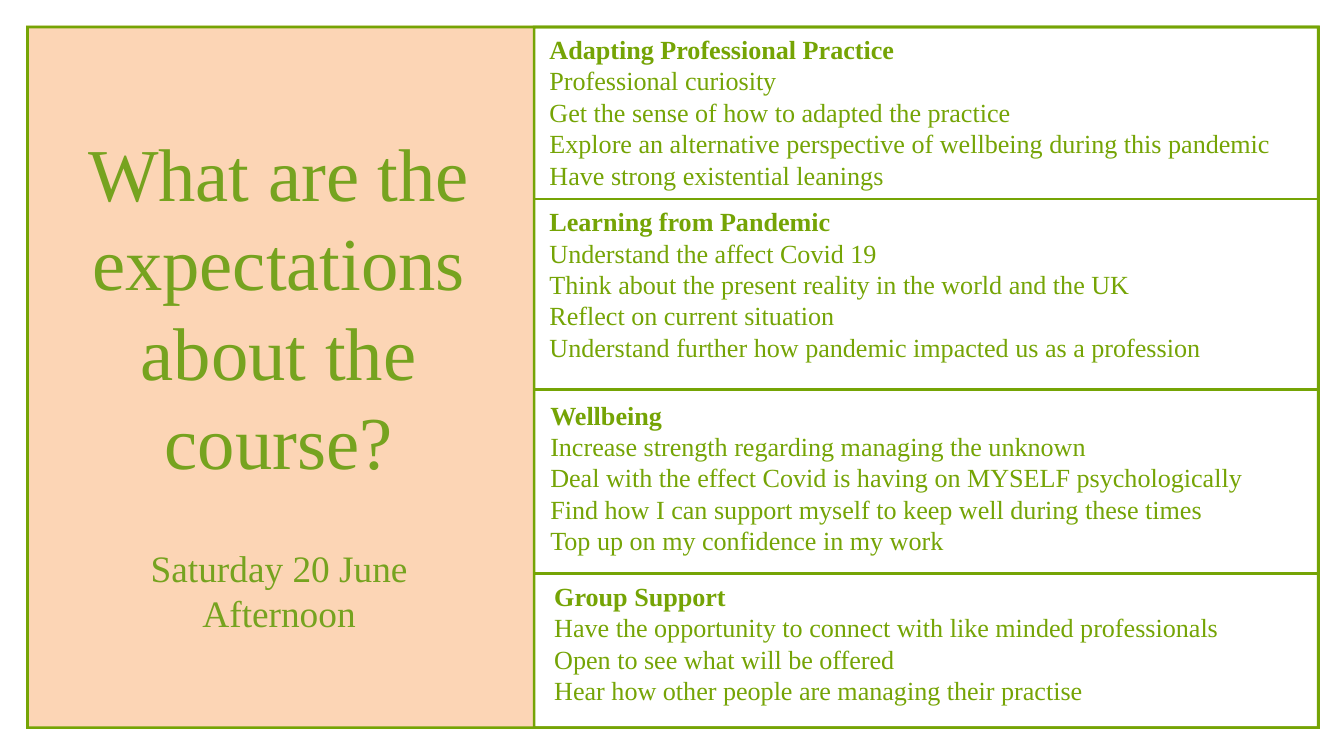
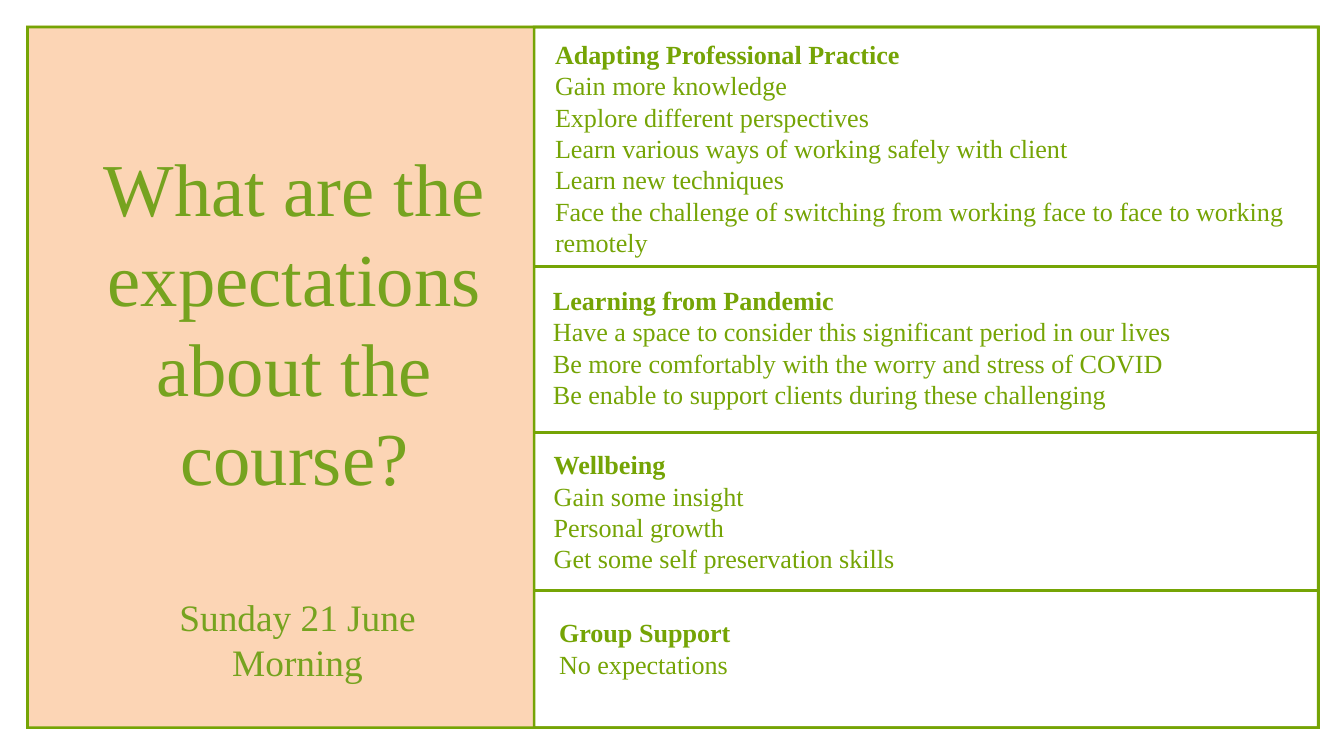
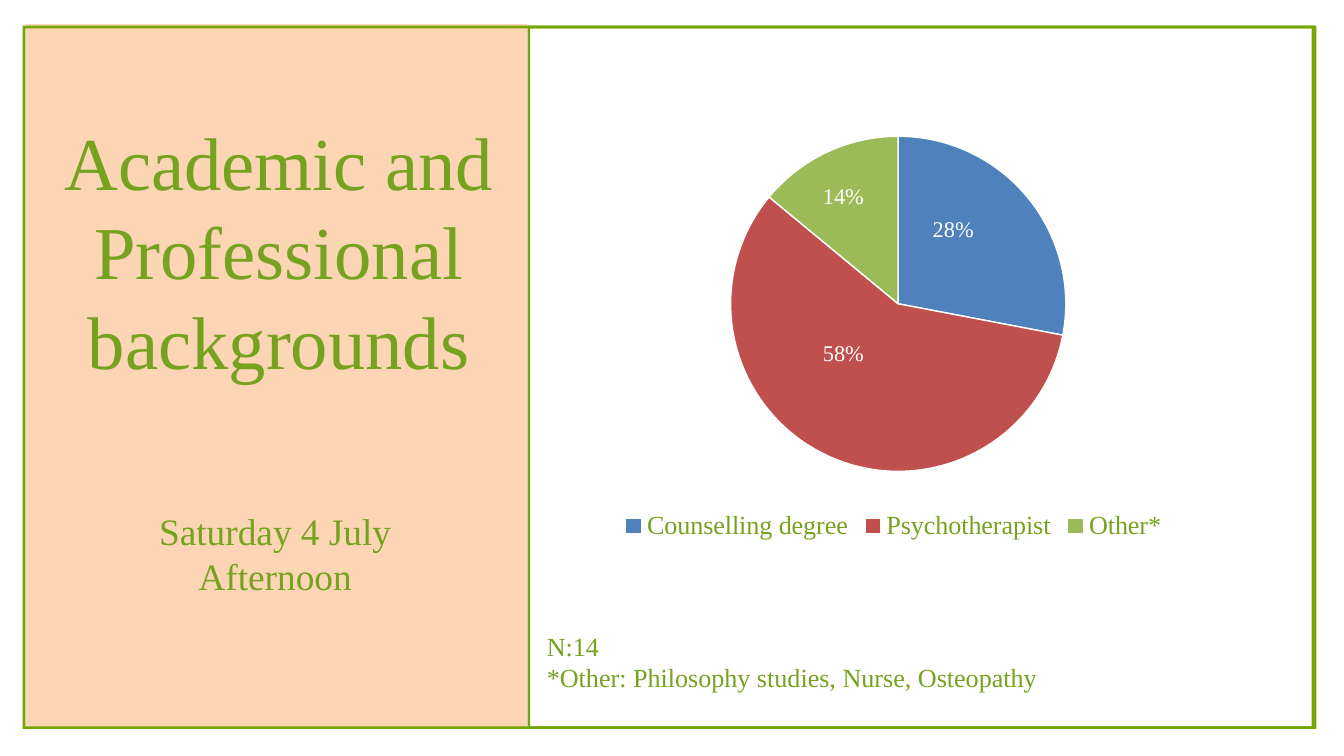
import lxml.etree
import pptx
import pptx.chart.data
import pptx.dml.color
import pptx.enum.chart
import pptx.enum.shapes
import pptx.enum.text
import pptx.oxml
import pptx.oxml.ns
import pptx.util

Cm, Pt = pptx.util.Cm, pptx.util.Pt
qn = pptx.oxml.ns.qn

COLORS = {
    "panel": "FCD5B5",
    "border": "75A405",
    "heading": "76A31F",
    "white": "FFFFFF",
    "blue": "4F81BD",
    "red": "C0504D",
    "green": "9BBB59",
}
FONT = "Times New Roman"
BAND = 0.1
QUESTION = "What are the expectations about the course?"

# Boxes are (left, top, width, height) in centimetres.
PANEL = (0.99, 0.97, 19.15, 26.59)
OUTER = (0.99, 0.97, 48.9, 26.59)
CONTENT = (20.14, 0.97, 29.74, 26.59)


def rgb(name):
    return pptx.dml.color.RGBColor.from_string(COLORS[name])


def style_font(font, size, color, bold=False):
    font.name, font.size, font.bold = FONT, Pt(size), bold
    font.color.rgb = rgb(color)


def add_text(s, box, lines, size=28, color="heading", bold_first=False,
             center=False, spacing=None, inset=True, wrap=True):
    """Add a text box with one paragraph for each line."""
    tf = s.shapes.add_textbox(*map(Cm, box)).text_frame
    tf.word_wrap = wrap
    if not inset:
        tf.margin_left = tf.margin_top = tf.margin_right = tf.margin_bottom = 0
    for i, line in enumerate(lines):
        p = tf.add_paragraph() if i else tf.paragraphs[0]
        if center:
            p.alignment = pptx.enum.text.PP_ALIGN.CENTER
        if spacing:
            p.line_spacing = Pt(spacing)
        r = p.add_run()
        r.text = line
        style_font(r.font, size, color, bold_first and i == 0)


def paint(sp, color):
    sp.fill.solid()
    sp.fill.fore_color.rgb = rgb(color)
    sp.line.fill.background()
    sp.shadow.inherit = False


def add_frame(s, box):
    """Draw a hollow rectangle as an outer and an inner outline."""
    x, y, w, h = box
    right, bottom = x + w, y + h
    outer = [(right, y), (x, y), (x, bottom), (right, bottom)]
    inner = [(right - BAND, bottom - BAND), (x + BAND, bottom - BAND),
             (x + BAND, y + BAND), (right - BAND, y + BAND)]
    outer, inner = ([(Cm(a), Cm(b)) for a, b in pts] for pts in (outer, inner))
    builder = s.shapes.build_freeform(*outer[0])
    builder.add_line_segments(outer[1:], close=True)
    builder.move_to(*inner[0])
    builder.add_line_segments(inner[1:], close=True)
    paint(builder.convert_to_shape(), "border")


def add_divider(s, x, y, width):
    line = s.shapes.add_connector(
        pptx.enum.shapes.MSO_CONNECTOR.STRAIGHT,
        Cm(x), Cm(y), Cm(x + width), Cm(y))
    line.line.color.rgb = rgb("border")
    line.line.width = Pt(3)
    lxml.etree.SubElement(line._element.spPr, qn("a:effectLst"))


def add_base(prs, panel=PANEL, outer=OUTER, content=CONTENT):
    """Add a slide with the coloured panel and both frames."""
    s = prs.slides.add_slide(prs.slide_layouts[6])
    paint(s.shapes.add_shape(pptx.enum.shapes.MSO_SHAPE.RECTANGLE,
                             *map(Cm, panel)), "panel")
    add_frame(s, outer)
    add_frame(s, content)
    return s


def add_panel_text(s, heading, heading_box, date, date_box, wrap_date=True):
    add_text(s, heading_box, [heading], size=80, center=True, spacing=96,
             inset=False)
    add_text(s, date_box, date, size=40, center=True, wrap=wrap_date)


def add_expectations(s, sections, dividers):
    for box, lines in sections:
        add_text(s, box, lines, color="border", bold_first=True)
    for x, y in dividers:
        add_divider(s, x, y, 29.68)


def manual_layout(**values):
    """Make a c:layout element from its settings."""
    layout = pptx.oxml.parse_xml(
        '<c:layout xmlns:c="http://schemas.openxmlformats.org/'
        'drawingml/2006/chart"><c:manualLayout/></c:layout>')
    for key, value in values.items():
        lxml.etree.SubElement(layout[0], qn("c:" + key)).set("val", str(value))
    return layout


def add_backgrounds_pie(s, box):
    data = pptx.chart.data.CategoryChartData()
    data.categories = ["Counselling degree", "Psychotherapist", "Other*"]
    data.add_series("Series 1", (28, 58, 14))
    chart = s.shapes.add_chart(pptx.enum.chart.XL_CHART_TYPE.PIE,
                               *map(Cm, box), data).chart
    chart.has_title = False
    chart.has_legend = True
    chart.legend.position = pptx.enum.chart.XL_LEGEND_POSITION.BOTTOM
    chart.legend.include_in_layout = False
    style_font(chart.legend.font, 28, "heading")
    plot = chart.plots[0]
    plot.vary_by_categories = True

    label_shifts = [(-0.01, -0.04), (-0.02, -0.05), (-0.02, -0.06)]
    for i, color in enumerate(("blue", "red", "green")):
        point = plot.series[0].points[i]
        point.format.fill.solid()
        point.format.fill.fore_color.rgb = rgb(color)
        point.format.line.color.rgb = rgb("white")
        point.format.line.width = Pt(1.5)
        style_font(point.data_label.font, 24, "white")
        point.data_label.position = pptx.enum.chart.XL_LABEL_POSITION.CENTER

    root = chart._chartSpace
    for label, (dx, dy) in zip(root.iter(qn("c:dLbl")), label_shifts):
        label.find(qn("c:showVal")).set("val", "0")
        label.find(qn("c:showPercent")).set("val", "1")
        label.insert(1, manual_layout(x=dx, y=dy))

    area = next(root.iter(qn("c:plotArea")))
    for old in area.findall(qn("c:layout")):
        area.remove(old)
    area.insert(0, manual_layout(layoutTarget="inner", xMode="edge",
                                 yMode="edge", x=0.33, y=0.16, w=0.35, h=0.75))


def saturday_june(prs):
    s = add_base(prs)
    add_panel_text(s, QUESTION, (2.08, 4.78, 16.92, 13.69),
                   ["Saturday 20 June Afternoon"], (4.72, 20.5, 11.66, 3.68))
    add_expectations(s, [
        ((20.52, 1.14, 29.69, 14.1), [
            "Adapting Professional Practice",
            "Professional curiosity",
            "Get the sense of how to adapted the practice",
            "Explore an alternative perspective of wellbeing during this pandemic",
            "Have strong existential leanings"]),
        ((20.52, 7.65, 26.49, 9.4), [
            "Learning from Pandemic",
            "Understand the affect Covid 19",
            "Think about the present reality in the world and the UK",
            "Reflect on current situation",
            "Understand further how pandemic impacted us as a profession"]),
        ((20.55, 14.96, 26.67, 7.77), [
            "Wellbeing",
            "Increase strength regarding managing the unknown",
            "Deal with the effect Covid is having on MYSELF psychologically",
            "Find how I can support myself to keep well during these times",
            "Top up on my confidence in my work"]),
        ((20.7, 21.82, 26.67, 6.83), [
            "Group Support",
            "Have the opportunity to connect with like minded professionals",
            "Open to see what will be offered",
            "Hear how other people are managing their practise"]),
    ], [(20.14, 7.52), (20.14, 14.71), (20.14, 21.69)])


def sunday_june(prs):
    s = add_base(prs)
    add_panel_text(s, QUESTION, (2.67, 5.38, 16.92, 13.69),
                   ["Sunday 21 June", "Morning"], (6.38, 22.33, 9.73, 3.68),
                   wrap_date=False)
    add_expectations(s, [
        ((20.73, 1.32, 29.69, 13.77), [
            "Adapting Professional Practice",
            "Gain more knowledge",
            "Explore different perspectives",
            "Learn various ways of working safely with client",
            "Learn new techniques",
            "Face the challenge of switching from working face to face to "
            "working remotely"]),
        ((20.65, 10.62, 26.49, 6.83), [
            "Learning from Pandemic",
            "Have a space to consider this significant period in our lives",
            "Be more comfortably with the worry and stress of COVID",
            "Be enable to support clients during these challenging"]),
        ((20.68, 16.84, 26.67, 5.82), [
            "Wellbeing",
            "Gain some insight",
            "Personal growth",
            "Get some self preservation skills"]),
        ((20.88, 23.19, 23.55, 3.43), [
            "Group Support",
            "No expectations"]),
    ], [(20.19, 10.06), (20.14, 16.36), (20.17, 22.33)])


def saturday_july(prs):
    s = add_base(prs, panel=(0.97, 0.91, 18.97, 26.59),
                 outer=(0.86, 0.97, 48.9, 26.59),
                 content=(19.94, 0.97, 29.74, 26.59))
    add_panel_text(s, "Academic and Professional backgrounds",
                   (2.08, 4.37, 16.92, 10.26),
                   ["Saturday 4 July", "Afternoon"], (4.57, 19.1, 11.66, 3.68))
    add_backgrounds_pie(s, (15.67, 0.97, 36.2, 19.66))
    add_text(s, (20.42, 23.7, 29.51, 3.68),
             ["N:14", "*Other: Philosophy studies, Nurse, Osteopathy"])


def main():
    prs = pptx.Presentation()
    prs.slide_width, prs.slide_height = Cm(50.8), Cm(28.58)
    saturday_june(prs)
    sunday_june(prs)
    saturday_july(prs)
    prs.save("out.pptx")


if __name__ == "__main__":
    main()
